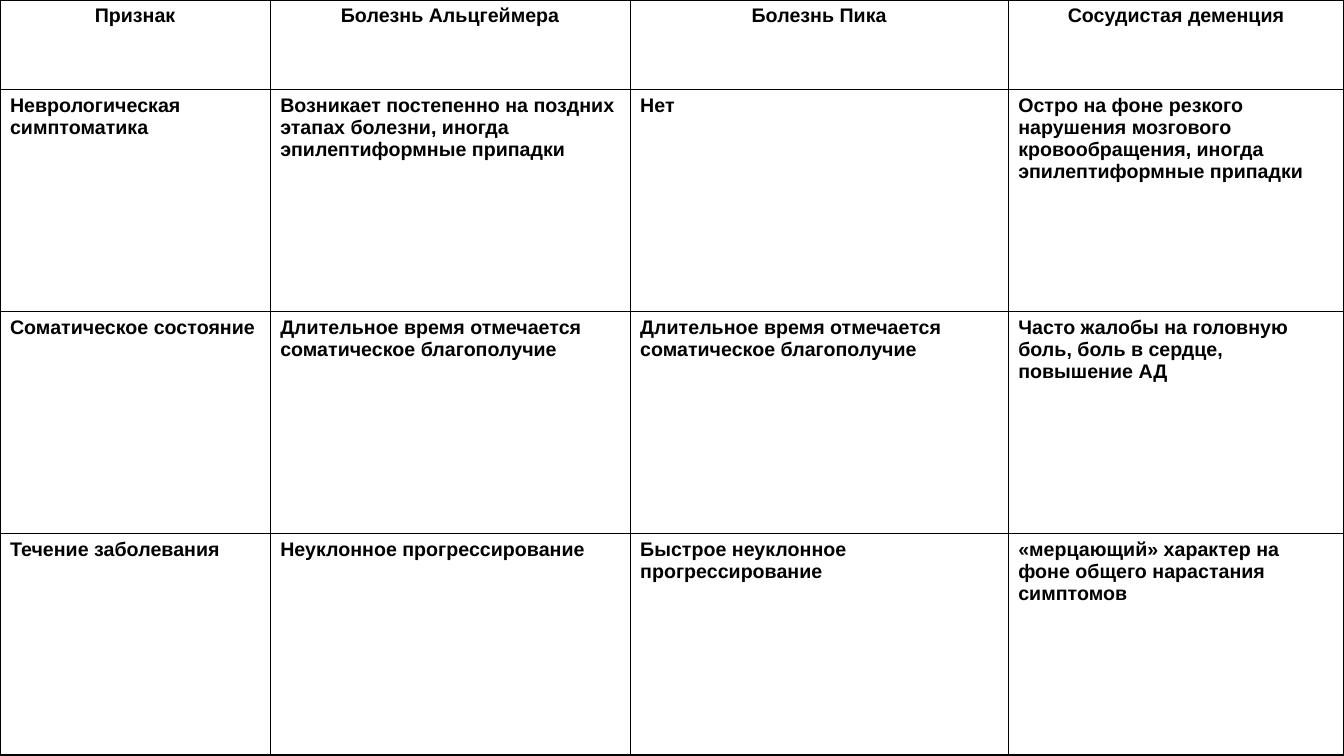
from dataclasses import dataclass

from lxml import etree
from pptx import Presentation
from pptx.dml.color import RGBColor
from pptx.enum.text import PP_ALIGN
from pptx.oxml.ns import qn
from pptx.util import Inches, Pt

CENTER, LEFT = PP_ALIGN.CENTER, PP_ALIGN.LEFT


@dataclass
class Theme:
    font: str = "Arial"
    ink: str = "000000"
    size: float = 14
    space_before: float = 2.8
    inner: float = 1
    outer: float = 2.25


theme = Theme()

COLS = [2.68, 3.57, 3.75, 3.33]
ROWS = [0.89, 2.2, 2.2, 2.2]
WELLBEING = "Длительное время отмечается соматическое благополучие"
DEMENTIA = [
    ["Признак", "Болезнь Альцгеймера", "Болезнь Пика", "Сосудистая деменция"],
    ["Неврологическая симптоматика",
     "Возникает постепенно на поздних этапах болезни, иногда эпилептиформные припадки",
     "Нет",
     "Остро на фоне резкого нарушения мозгового кровообращения, иногда эпилептиформные припадки"],
    ["Соматическое состояние", WELLBEING, WELLBEING,
     "Часто жалобы на головную боль, боль в сердце, повышение АД"],
    ["Течение заболевания", "Неуклонное прогрессирование",
     "Быстрое неуклонное прогрессирование",
     "«мерцающий» характер на фоне общего нарастания симптомов"],
]


def set_borders(cell, widths):
    tc_pr = cell._tc.get_or_add_tcPr()
    for i, (side, width) in enumerate(widths.items()):
        ln = etree.Element(qn(f"a:ln{side}"), w=str(Pt(width)))
        fill = etree.SubElement(ln, qn("a:solidFill"))
        etree.SubElement(fill, qn("a:srgbClr"), val=theme.ink)
        tc_pr.insert(i, ln)


prs = Presentation()
prs.slide_width, prs.slide_height = Inches(13.33), Inches(7.5)
s = prs.slides.add_slide(prs.slide_layouts[6])

table = s.shapes.add_table(len(ROWS), len(COLS), 0, 0,
                           Inches(sum(COLS)), Inches(sum(ROWS))).table
table.first_row = table.horz_banding = False
for column, width in zip(table.columns, COLS):
    column.width = Inches(width)
for row, height in zip(table.rows, ROWS):
    row.height = Inches(height)

last_row, last_col = len(ROWS) - 1, len(COLS) - 1
for i, texts in enumerate(DEMENTIA):
    for j, text in enumerate(texts):
        cell = table.cell(i, j)
        cell.fill.background()
        edges = {"L": j == 0, "R": j == last_col, "T": i == 0, "B": i == last_row}
        set_borders(cell, {side: theme.outer if edge else theme.inner
                           for side, edge in edges.items()})
        p = cell.text_frame.paragraphs[0]
        p.alignment = CENTER if i == 0 else LEFT
        p.space_before = Pt(theme.space_before)
        r = p.add_run()
        r.text = text
        r.font.name = theme.font
        r.font.size = Pt(theme.size)
        r.font.bold = True
        r.font.color.rgb = RGBColor.from_string(theme.ink)

prs.save("out.pptx")
